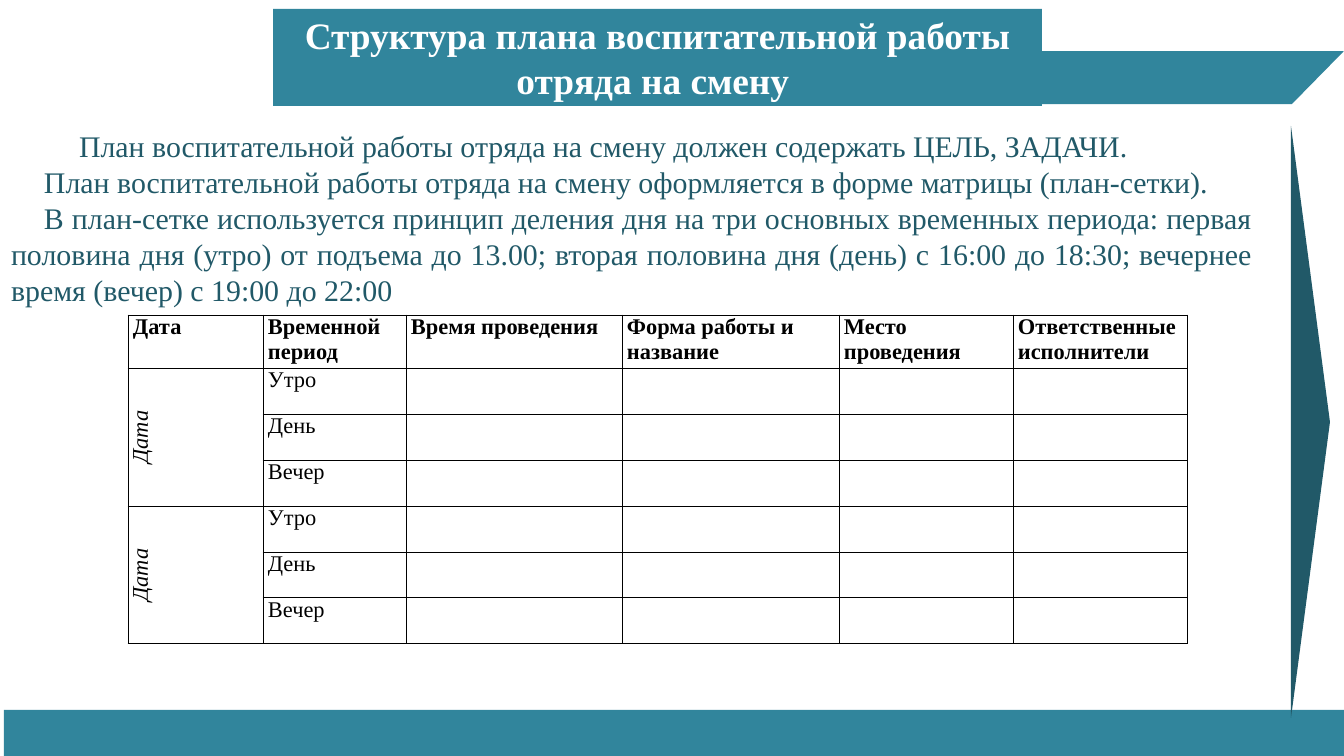
import pptx
import pptx.util
import pptx.dml.color
import pptx.enum.shapes
import pptx.enum.text
import pptx.oxml
import pptx.oxml.ns

RGBColor = pptx.dml.color.RGBColor
ALIGN = pptx.enum.text.PP_ALIGN
TEAL = RGBColor(0x31, 0x85, 0x9C)
DEEP_TEAL = RGBColor(0x21, 0x59, 0x68)
WHITE = RGBColor(0xFF, 0xFF, 0xFF)
BLACK = RGBColor(0x00, 0x00, 0x00)

TITLE = "Структура плана воспитательной работы отряда на смену "
INTRO = [
    "План воспитательной работы отряда на смену должен содержать ЦЕЛЬ, ЗАДАЧИ.",
    "План воспитательной работы отряда на смену оформляется в форме матрицы (план-сетки).",
    "В план-сетке используется принцип деления дня на три основных временных периода: "
    "первая половина дня (утро) от подъема до 13.00; вторая половина дня (день) "
    "с 16:00 до 18:30; вечернее время (вечер) с 19:00 до 22:00",
]
INDENTS = [68, 33, 33]
HEADERS = ["Дата", "Временной период", "Время проведения", "Форма работы и название",
           "Место\nпроведения", "Ответственные исполнители"]
PERIODS = ["Утро", "День", "Вечер"]
DAYS = 2
COLUMN_WIDTHS = [135, 143, 216, 217, 174, 174]
HEADER_HEIGHT = 53
ROW_HEIGHT = 46


def px(length):
    return pptx.util.Inches(length / 67.2)


class SlideBuilder:
    font = "Times New Roman"

    def __init__(self, deck):
        self.page = deck.slides.add_slide(deck.slide_layouts[5])

    def style(self, frame, size, color, align=ALIGN.LEFT, bold=False, italic=False):
        for para in frame.paragraphs:
            para.alignment = align
            para.line_spacing = 1.0
            for span in para.runs:
                span.font.name = self.font
                span.font.size = pptx.util.Pt(size)
                span.font.color.rgb = color
                span.font.bold = bold
                span.font.italic = italic

    def paint(self, shape, color):
        shape.shadow.inherit = False
        shape.fill.solid()
        shape.fill.fore_color.rgb = color
        shape.line.fill.background()

    def outline(self, points, color):
        corners = [(px(x), px(y)) for x, y in points]
        builder = self.page.shapes.build_freeform(*corners[0], scale=1.0)
        builder.add_line_segments(corners[1:], close=True)
        self.paint(builder.convert_to_shape(), color)

    def bar(self, left, top, width, height, color):
        kind = pptx.enum.shapes.MSO_SHAPE.RECTANGLE
        shape = self.page.shapes.add_shape(kind, px(left), px(top), px(width), px(height))
        self.paint(shape, color)

    def title(self, text, left, top, width, height):
        box = self.page.shapes.title
        box.element.getparent().append(box.element)
        box.left, box.top, box.width, box.height = px(left), px(top), px(width), px(height)
        box.fill.solid()
        box.fill.fore_color.rgb = TEAL
        frame = box.text_frame
        frame.text = text
        frame.word_wrap = True
        frame.auto_size = pptx.enum.text.MSO_AUTO_SIZE.NONE
        frame.vertical_anchor = pptx.enum.text.MSO_ANCHOR.TOP
        self.style(frame, 40, WHITE, ALIGN.CENTER, bold=True)

    def paragraphs(self, texts, indents, left, top, width, height):
        box = self.page.shapes.add_textbox(px(left), px(top), px(width), px(height))
        frame = box.text_frame
        frame.word_wrap = True
        frame.margin_left = frame.margin_right = frame.margin_bottom = 0
        frame.margin_top = px(4)
        frame.text = "\n".join(texts)
        for para, indent in zip(frame.paragraphs, indents):
            para._p.get_or_add_pPr().set("indent", str(px(indent)))
        self.style(frame, 32, DEEP_TEAL, ALIGN.JUSTIFY)

    def table(self, left, top, widths, heights):
        frame = self.page.shapes.add_table(len(heights), len(widths), px(left), px(top),
                                           px(sum(widths)), px(sum(heights)))
        grid = frame.table
        grid.first_row = grid.horz_banding = False
        for column, width in zip(grid.columns, widths):
            column.width = px(width)
        for row, height in zip(grid.rows, heights):
            row.height = px(height)
        for cell in grid.iter_cells():
            cell.fill.background()
            cell.margin_left = cell.margin_right = px(5)
            cell.margin_top = cell.margin_bottom = 0
            self.border(cell)
        return grid

    def border(self, cell):
        properties = cell._tc.get_or_add_tcPr()
        for position, side in enumerate(["lnL", "lnR", "lnT", "lnB"]):
            line = pptx.oxml.parse_xml(
                f'<a:{side} {pptx.oxml.ns.nsdecls("a")} w="12700">'
                f'<a:solidFill><a:srgbClr val="{BLACK}"/></a:solidFill></a:{side}>')
            properties.insert(position, line)

    def cell_text(self, cell, text, **style):
        cell.text_frame.text = text
        self.style(cell.text_frame, 24, BLACK, **style)

    def plan_grid(self, left, top):
        heights = [HEADER_HEIGHT] + [ROW_HEIGHT] * (DAYS * len(PERIODS))
        grid = self.table(left, top, COLUMN_WIDTHS, heights)
        for column, header in enumerate(HEADERS):
            self.cell_text(grid.cell(0, column), header, bold=True)
        for day in range(DAYS):
            first = 1 + day * len(PERIODS)
            date = grid.cell(first, 0)
            date.merge(grid.cell(first + len(PERIODS) - 1, 0))
            date._tc.get_or_add_tcPr().set("vert", "vert270")
            self.cell_text(date, HEADERS[0], align=ALIGN.CENTER, italic=True)
            for offset, period in enumerate(PERIODS):
                self.cell_text(grid.cell(first + offset, 1), period)


def main():
    deck = pptx.Presentation()
    deck.slide_width, deck.slide_height = px(1344), px(756)
    slide = SlideBuilder(deck)
    slide.outline([(607, 51), (1344, 51), (1292, 104), (555, 104)], TEAL)
    slide.bar(4, 710, 1340, 46, TEAL)
    slide.outline([(1330, 422), (1291, 718), (1291, 126)], DEEP_TEAL)
    slide.paragraphs(INTRO, INDENTS, 11, 124, 1242, 184)
    slide.title(TITLE, 273, 9, 769, 97)
    slide.plan_grid(128, 315)
    deck.save("out.pptx")


if __name__ == "__main__":
    main()
